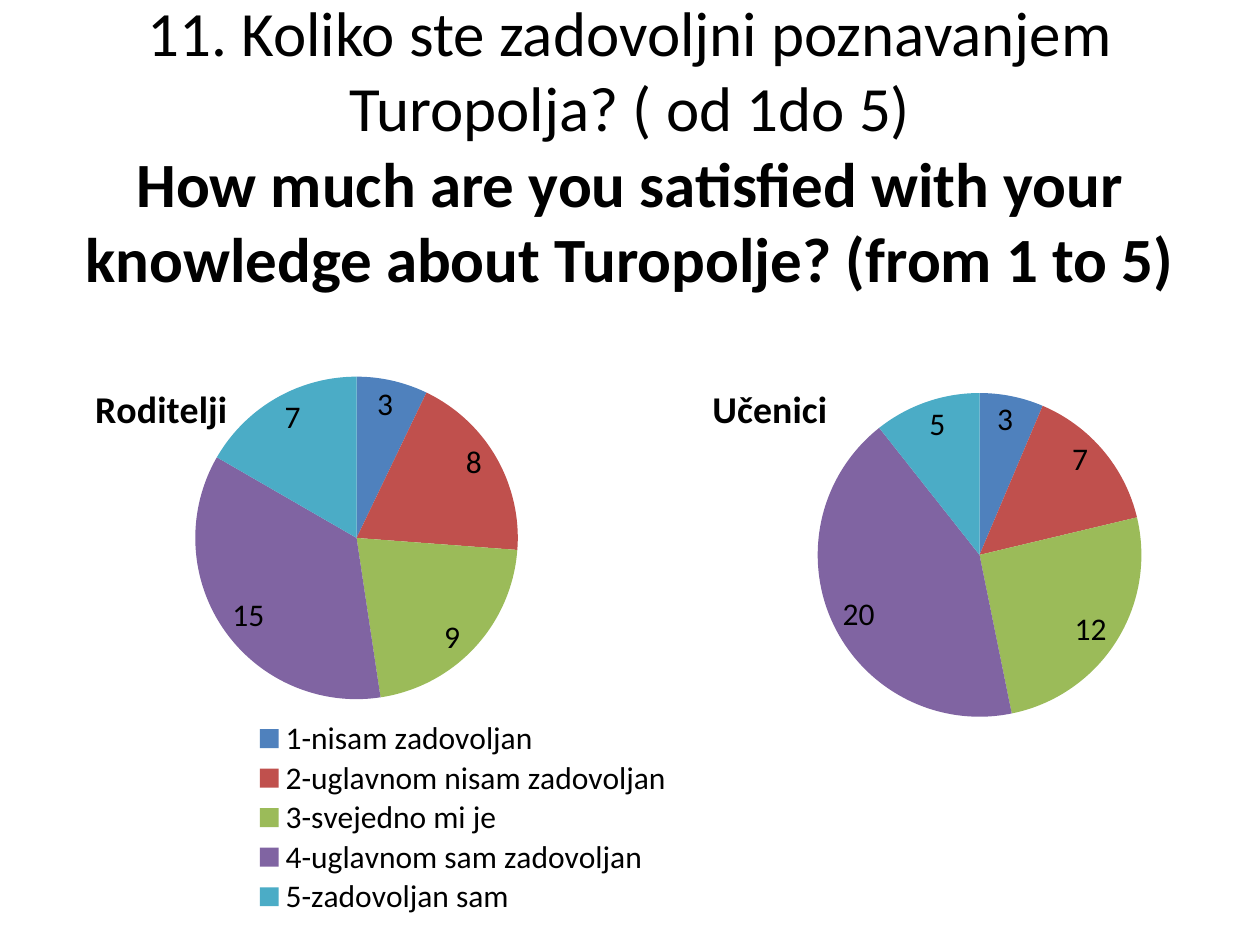
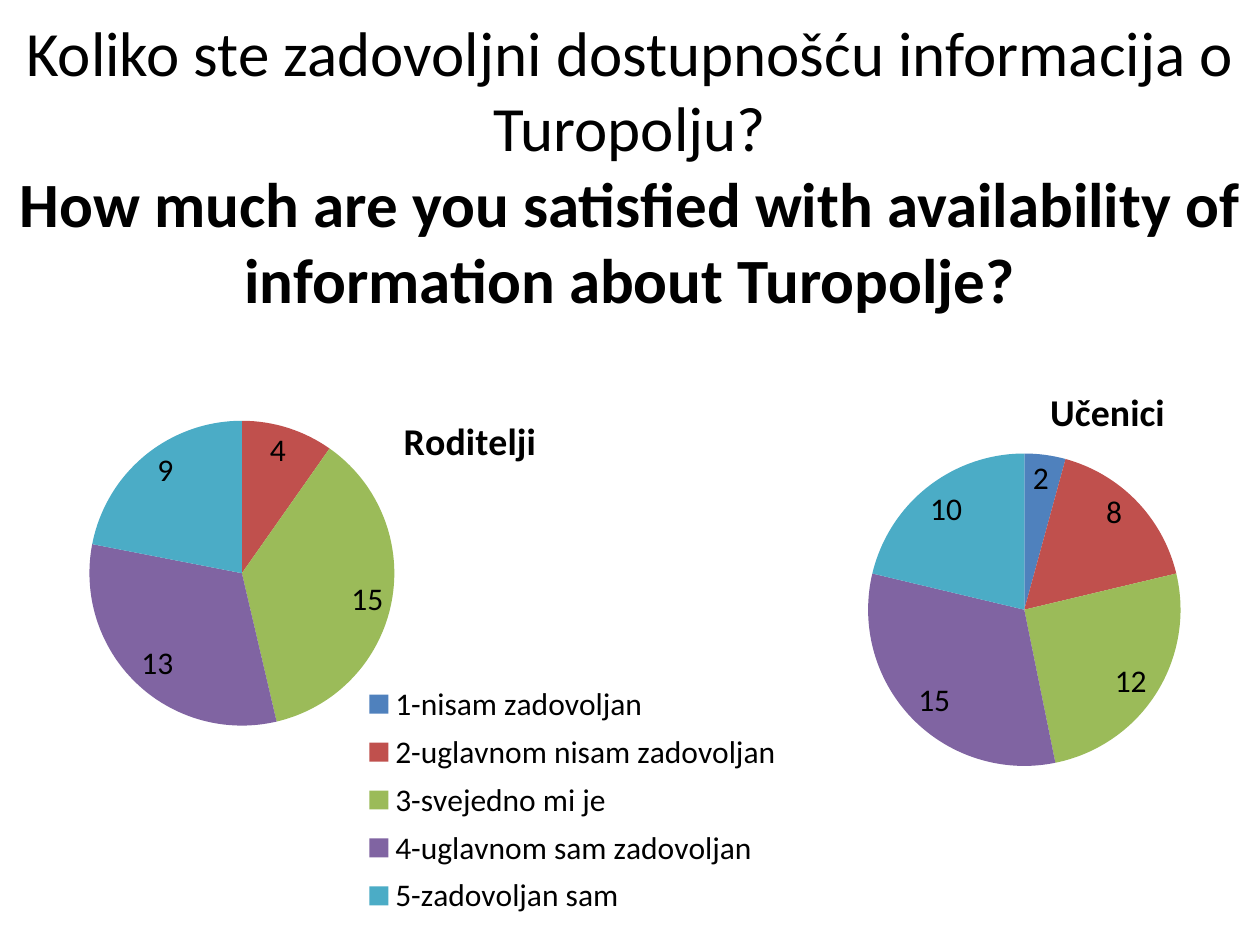
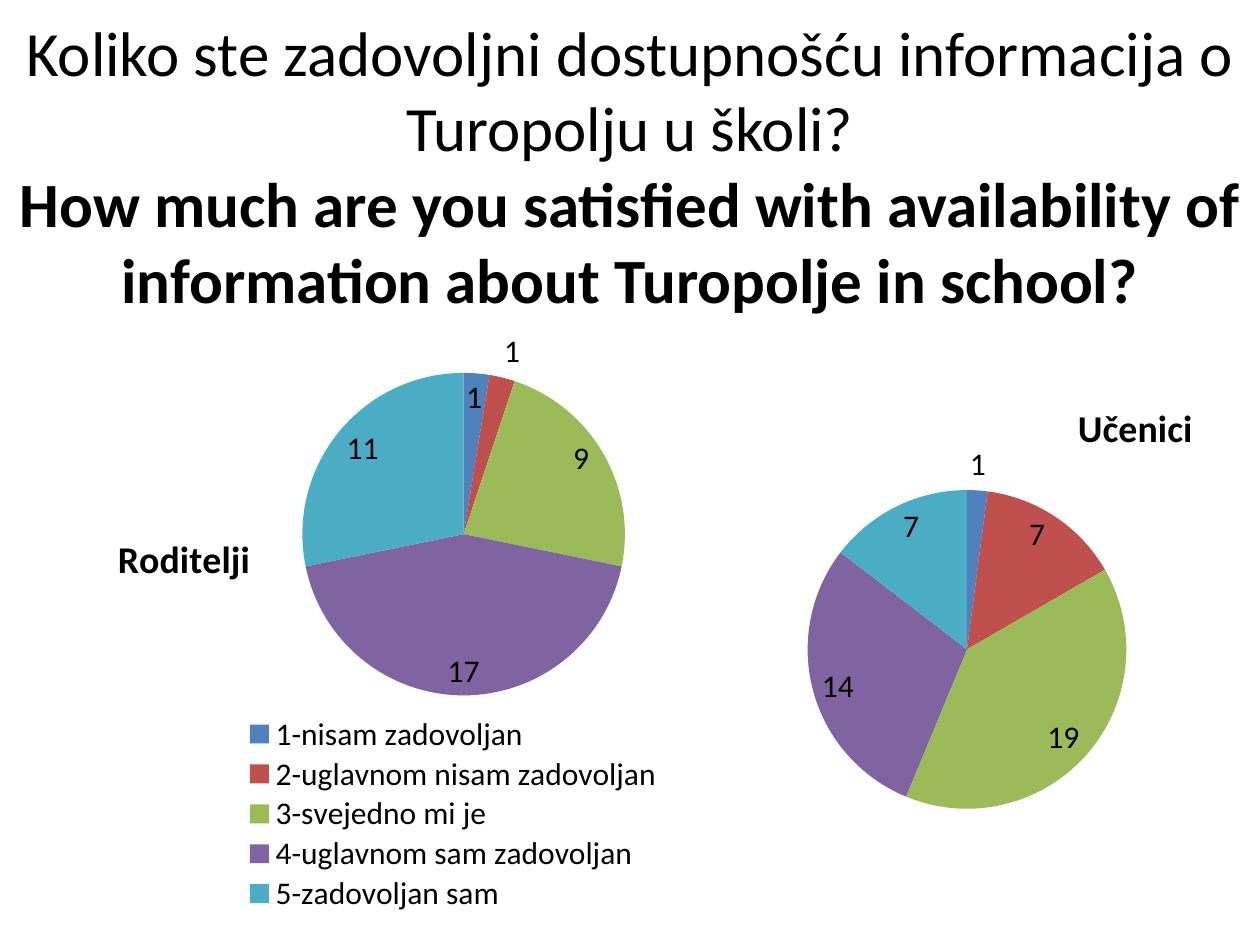
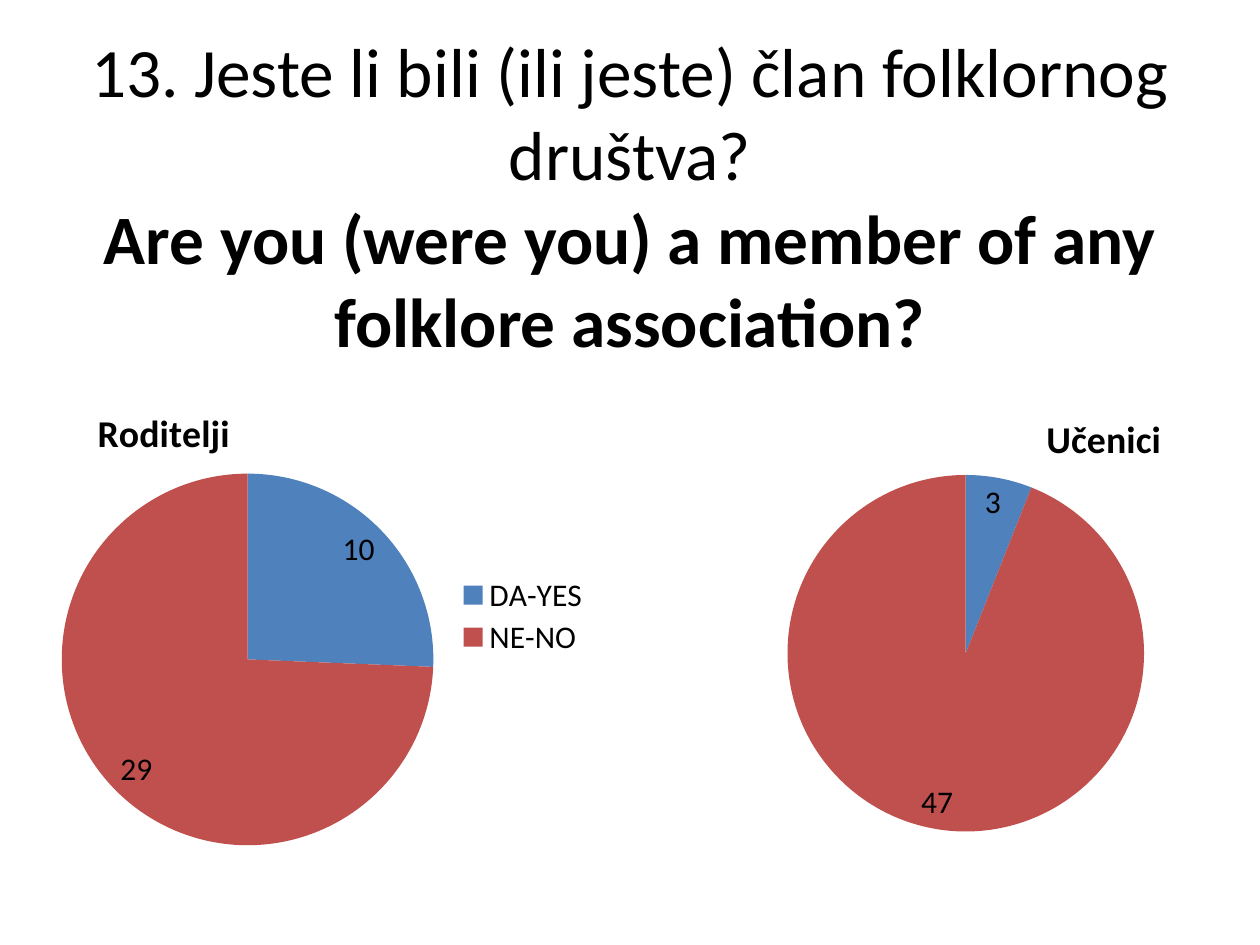
from dataclasses import dataclass

from pptx import Presentation
from pptx.chart.data import CategoryChartData
from pptx.dml.color import RGBColor
from pptx.enum.chart import XL_CHART_TYPE, XL_LABEL_POSITION, XL_LEGEND_POSITION
from pptx.enum.text import MSO_ANCHOR, PP_ALIGN
from pptx.oxml import parse_xml
from pptx.oxml.ns import nsdecls, qn
from pptx.util import Inches, Pt


@dataclass(frozen=True)
class Theme:
    font: str = "Calibri"
    text: RGBColor = RGBColor(0, 0, 0)
    background: RGBColor = RGBColor(255, 255, 255)
    slices: tuple = ("4F81BD", "C0504D", "9BBB59", "8064A2", "4BACC6")
    question_size: float = 36
    large_question_size: float = 39.6
    chart_size: float = 18
    chart_title_size: float = 21.6


@dataclass(frozen=True)
class Pie:
    title: str
    values: tuple
    frame: tuple
    title_at: tuple
    circle: tuple
    answers: tuple = ()
    legend: tuple = ()


THEME = Theme()
PARENTS = "Roditelji"
PUPILS = "Učenici"
SATISFACTION = (
    "1-nisam zadovoljan",
    "2-uglavnom nisam zadovoljan",
    "3-svejedno mi je",
    "4-uglavnom sam zadovoljan",
    "5-zadovoljan sam",
)
YES_NO = ("DA-YES", "NE-NO")


def add_page(deck):
    page = deck.slides.add_slide(deck.slide_layouts[6])
    page.background.fill.solid()
    page.background.fill.fore_color.rgb = THEME.background
    return page


def add_question(page, top, croatian, english, size=THEME.question_size):
    box = page.shapes.add_textbox(Inches(0), Inches(top), Inches(10), Inches(1.25))
    frame = box.text_frame
    frame.word_wrap = True
    frame.vertical_anchor = MSO_ANCHOR.MIDDLE
    para = frame.paragraphs[0]
    para.alignment = PP_ALIGN.CENTER
    para.font.name = THEME.font
    para.font.size = Pt(size)
    para.font.color.rgb = THEME.text
    para.add_run().text = croatian
    para.add_line_break()
    span = para.add_run()
    span.text = english
    span.font.bold = True


def place(element, index, frame, area, inner=False):
    for layout in element.findall(qn("c:layout")):
        element.remove(layout)
    left, top, width, height = frame
    settings = [("layoutTarget", "inner")] if inner else []
    settings += [("xMode", "edge"), ("yMode", "edge")]
    settings += [("x", (area[0] - left) / width), ("y", (area[1] - top) / height)]
    if len(area) == 4:
        settings += [("w", area[2] / width), ("h", area[3] / height)]
    children = "".join(f'<c:{name} val="{value}"/>' for name, value in settings)
    element.insert(index, parse_xml(
        f'<c:layout {nsdecls("c")}><c:manualLayout>{children}</c:manualLayout></c:layout>'
    ))


def add_chart_title(chart, pie):
    chart.has_title = True
    para = chart.chart_title.text_frame.paragraphs[0]
    para.text = pie.title
    para.font.name = THEME.font
    para.font.size = Pt(THEME.chart_title_size)
    para.font.bold = True
    para.font.color.rgb = THEME.text
    place(chart.chart_title._element, 1, pie.frame, pie.title_at)


def add_legend(chart, pie):
    chart.has_legend = bool(pie.legend)
    if pie.legend:
        chart.legend.position = XL_LEGEND_POSITION.RIGHT
        chart.legend.include_in_layout = False
        place(chart.legend._element, 1, pie.frame, pie.legend)


def add_pie(page, pie):
    data = CategoryChartData()
    data.categories = pie.answers or [str(n + 1) for n in range(len(pie.values))]
    data.add_series(pie.title, pie.values)
    chart = page.shapes.add_chart(
        XL_CHART_TYPE.PIE, *(Inches(length) for length in pie.frame), data
    ).chart
    chart.font.name = THEME.font
    chart.font.size = Pt(THEME.chart_size)
    chart.font.color.rgb = THEME.text
    add_chart_title(chart, pie)
    add_legend(chart, pie)

    plot = chart.plots[0]
    plot.vary_by_categories = True
    plot.has_data_labels = True
    plot.data_labels.show_value = True
    plot.data_labels.show_percentage = False
    plot.data_labels.position = XL_LABEL_POSITION.BEST_FIT
    for index in range(len(pie.values)):
        fill = plot.series[0].points[index].format.fill
        fill.solid()
        fill.fore_color.rgb = RGBColor.from_string(THEME.slices[index])

    left, top, diameter = pie.circle
    plot_area = chart._chartSpace.find(".//" + qn("c:plotArea"))
    place(plot_area, 0, pie.frame, (left, top, diameter, diameter), inner=True)


def add_survey_page(deck, question, parents, pupils):
    page = add_page(deck)
    add_question(page, *question)
    add_pie(page, parents)
    add_pie(page, pupils)


def main():
    deck = Presentation()
    deck.slide_width = Inches(10)
    deck.slide_height = Inches(7.5)

    add_survey_page(
        deck,
        (0.52, "11. Koliko ste zadovoljni poznavanjem Turopolja? ( od 1do 5)",
         "How much are you satisfied with your knowledge about Turopolje? (from 1 to 5)"),
        Pie(PARENTS, (3, 8, 9, 15, 7), (0.35, 2.33, 5.28, 4.95), (0.7, 2.98),
            (1.55, 2.99, 2.56), SATISFACTION, (2, 5.7, 3.35, 1.58)),
        Pie(PUPILS, (3, 7, 12, 20, 5), (5.31, 2.33, 4.42, 4.95), (5.6, 2.98),
            (6.49, 3.12, 2.57)),
    )
    add_survey_page(
        deck,
        (0.68, "Koliko ste zadovoljni dostupnošću informacija o Turopolju?",
         "How much are you satisfied with availability of information about Turopolje?"),
        Pie(PARENTS, (0, 4, 15, 13, 9), (0, 2.03, 6.5, 5.47), (3.15, 3.23),
            (0.71, 3.34, 2.42), SATISFACTION, (2.87, 5.36, 3.35, 1.98)),
        Pie(PUPILS, (2, 8, 12, 15, 10), (5.58, 2.41, 4.42, 4.95), (8.28, 3),
            (6.89, 3.6, 2.48)),
    )
    add_survey_page(
        deck,
        (0.68, "Koliko ste zadovoljni dostupnošću informacija o Turopolju u školi?",
         "How much are you satisfied with availability of information about Turopolje in school?"),
        Pie(PARENTS, (1, 1, 9, 17, 11), (0.59, 2.55, 4.89, 4.95), (0.88, 4.17),
            (2.4, 2.96, 2.56), SATISFACTION, (1.92, 5.66, 3.35, 1.6)),
        Pie(PUPILS, (1, 7, 19, 14, 7), (5.31, 2.55, 4.42, 4.95), (8.5, 3.13),
            (6.41, 3.89, 2.53)),
    )
    add_survey_page(
        deck,
        (0.92, "13. Jeste li bili (ili jeste) član folklornog društva?",
         "Are you (were you) a member of any folklore association?",
         THEME.large_question_size),
        Pie(PARENTS, (10, 29), (0.35, 2.41, 4.42, 4.95), (0.72, 3.17),
            (0.49, 3.76, 2.95), YES_NO, (3.6, 4.54, 1.1, 0.7)),
        Pie(PUPILS, (3, 47), (5.24, 2.55, 4.42, 4.95), (8.25, 3.22),
            (6.25, 3.77, 2.83)),
    )
    deck.save("out.pptx")


if __name__ == "__main__":
    main()
